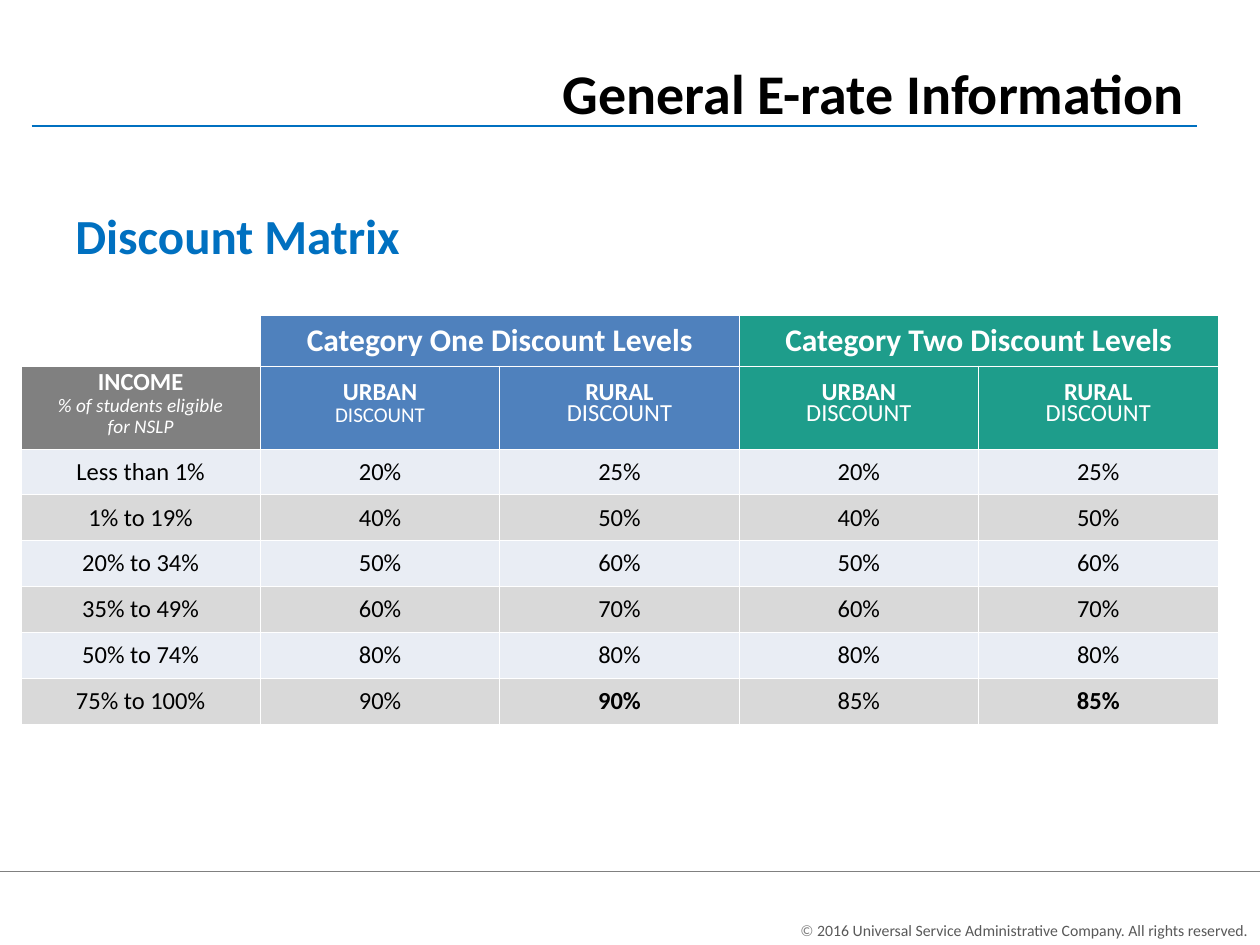
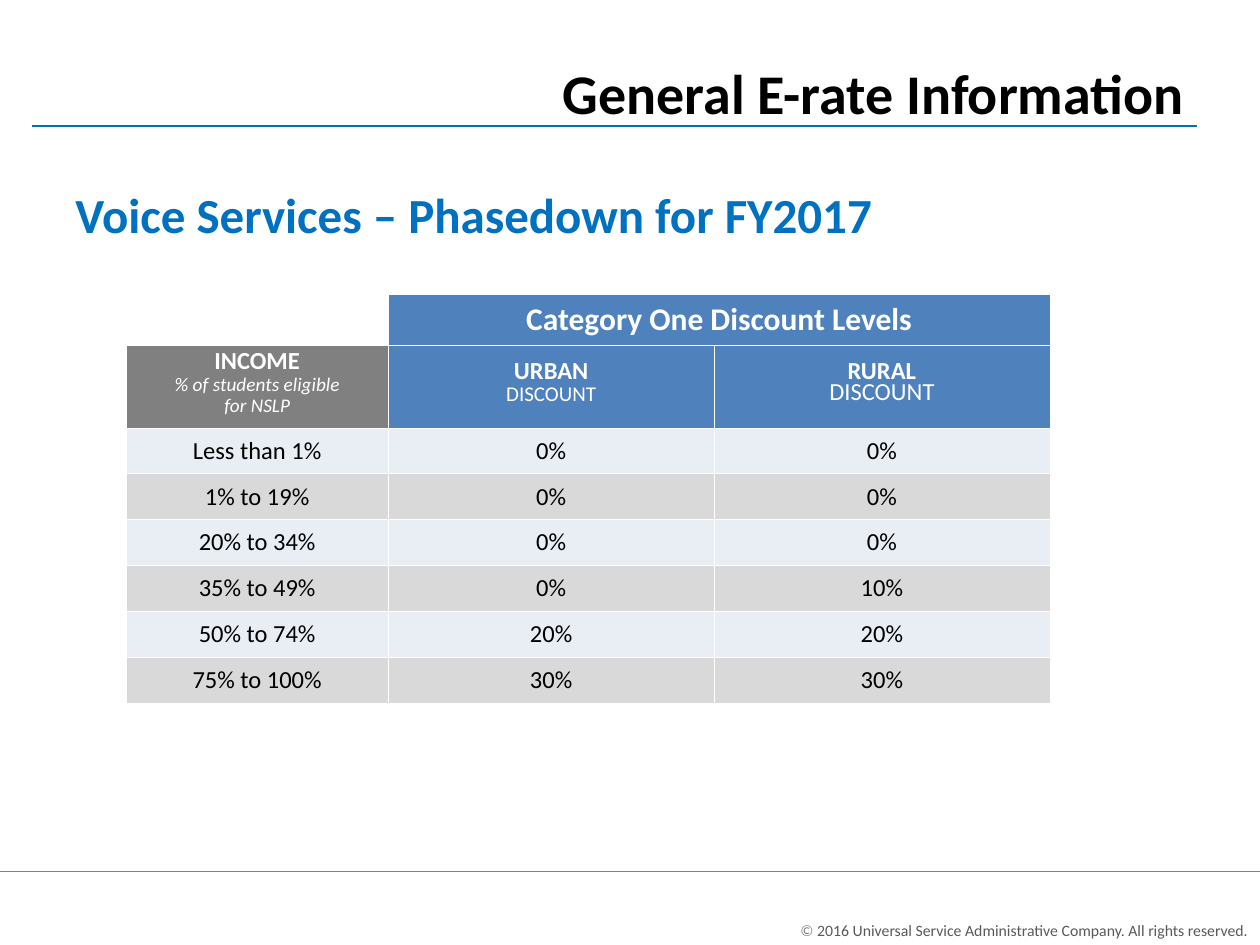
from copy import deepcopy

from lxml.etree import SubElement
from pptx import Presentation
from pptx.dml.color import RGBColor
from pptx.enum.shapes import MSO_CONNECTOR
from pptx.enum.text import MSO_ANCHOR, MSO_AUTO_SIZE, PP_ALIGN
from pptx.oxml.ns import qn
from pptx.util import Inches, Pt

# Shared style: the slide is a grid of 120 columns by 90 rows
COLS, ROWS = 120, 90
FONT = "Calibri"
BLACK, WHITE, GRAY, DARK = "000000", "FFFFFF", "808080", "595959"
ACCENT, BLUE, TEAL = "0070C0", "4F81BD", "1E9D8B"
BANDS = ("E9EDF4", "D9D9D9")
HEAD_H, SUBHEAD_H, DATA_H = 4.86, 7.9, 4.37

INCOMES = ["Less than 1%", "1% to 19%", "20% to 34%",
           "35% to 49%", "50% to 74%", "75% to 100%"]


def rgb(color):
    return RGBColor.from_string(color)


class Deck:
    def __init__(self):
        self.prs = Presentation()
        self.prs.slide_width, self.prs.slide_height = Inches(10), Inches(7.5)
        self.s = None

    def x(self, cols):
        return round(self.prs.slide_width * cols / COLS)

    def y(self, rows):
        return round(self.prs.slide_height * rows / ROWS)

    def box(self, left, top, width, height):
        return self.x(left), self.y(top), self.x(width), self.y(height)

    def style(self, font, size, color, bold=False, italic=False):
        font.name, font.size = FONT, Pt(size)
        font.bold, font.italic = bold, italic
        font.color.rgb = rgb(color)

    def add_slide(self, title):
        self.s = self.prs.slides.add_slide(self.prs.slide_layouts[5])
        self.line(3, 12, 114, ACCENT, 1.25)
        self.line(0, 83, 120, GRAY, 0.75)
        self.title(title)
        self.footer()

    def title(self, text):
        sp = self.s.shapes.title
        sp.left, sp.top, sp.width, sp.height = self.box(33, 5, 81, 7)
        tf = sp.text_frame
        tf.text = text
        tf.auto_size = MSO_AUTO_SIZE.NONE
        tf.vertical_anchor = MSO_ANCHOR.TOP
        p = tf.paragraphs[0]
        p.alignment = PP_ALIGN.RIGHT
        self.style(p.font, 32, BLACK, bold=True)

    def line(self, x1, y, x2, color, weight):
        c = self.s.shapes.add_connector(MSO_CONNECTOR.STRAIGHT, self.x(x1),
                                        self.y(y), self.x(x2), self.y(y))
        c.line.color.rgb = rgb(color)
        c.line.width = Pt(weight)
        SubElement(c._element.spPr, qn("a:effectLst"))

    def text_box(self, *place):
        tf = self.s.shapes.add_textbox(*self.box(*place)).text_frame
        tf.word_wrap = True
        return tf.paragraphs[0]

    def heading(self, text, top):
        p = self.text_box(6, top, 108, 8)
        p.text = text
        self.style(p.font, 28, ACCENT, bold=True)

    def footer(self):
        p = self.text_box(12.5, 87.1, 107.5, 3)
        p.alignment = PP_ALIGN.RIGHT
        notice = "2016 Universal Service Administrative Company. All rights reserved."
        for text, color in (("© ", GRAY), (notice, DARK)):
            r = p.add_run()
            r.text = text
            self.style(r.font, 9, color)

    def borders(self, cell):
        tcPr = cell._tc.get_or_add_tcPr()
        for i, side in enumerate(("a:lnL", "a:lnR", "a:lnT", "a:lnB")):
            ln = tcPr.makeelement(qn(side), {"w": str(Pt(0.5))})
            fill = SubElement(ln, qn("a:solidFill"))
            SubElement(fill, qn("a:srgbClr"), val=WHITE)
            tcPr.insert(i, ln)

    def cell(self, cell, text, fill, size=14, color=BLACK, bold=False):
        cell.fill.solid()
        cell.fill.fore_color.rgb = rgb(fill)
        p = cell.text_frame.paragraphs[0]
        p.text = text
        p.alignment = PP_ALIGN.CENTER
        self.style(p.font, size, color, bold)

    def label_cell(self, cell, fill, lines):
        """Stack lines of (text, size, bold, italic) in one tight paragraph."""
        cell.fill.solid()
        cell.fill.fore_color.rgb = rgb(fill)
        p = cell.text_frame.paragraphs[0]
        p.alignment = PP_ALIGN.CENTER
        p.line_spacing = Pt(12)
        for i, (text, size, bold, italic) in enumerate(lines):
            if i:
                # The break keeps the format of the line it ends
                p.add_line_break()
                p._p[-1].append(deepcopy(r._r.rPr))
            r = p.add_run()
            r.text = text
            self.style(r.font, size, WHITE, bold, italic)

    def discount_table(self, left, top, widths, categories, values, bold=()):
        heights = [HEAD_H, SUBHEAD_H] + [DATA_H] * len(values)
        frame = self.s.shapes.add_table(
            len(heights), len(widths),
            *self.box(left, top, sum(widths), sum(heights)))
        tbl = frame.table
        tbl.first_row = tbl.horz_banding = False
        for col, width in zip(tbl.columns, widths):
            col.width = self.x(width)
        for row, height in zip(tbl.rows, heights):
            row.height = self.y(height)
        for cell in tbl.iter_cells():
            cell.margin_left = cell.margin_right = 0
            cell.margin_top = cell.margin_bottom = 0
            cell.vertical_anchor = MSO_ANCHOR.MIDDLE
            cell.fill.background()
            self.borders(cell)

        # Header rows
        self.label_cell(tbl.cell(1, 0), GRAY, [
            ("INCOME", 14, True, False),
            ("% of students eligible", 11, False, True),
            ("for NSLP", 11, False, True)])
        for i, (name, fill) in enumerate(categories):
            first = 1 + 2 * i
            tbl.cell(0, first).merge(tbl.cell(0, first + 1))
            self.cell(tbl.cell(0, first), f"Category {name} Discount Levels",
                      fill, 18, WHITE, True)
            for c, area in enumerate(("URBAN", "RURAL"), first):
                self.label_cell(tbl.cell(1, c), fill, [
                    (area, 14, True, False),
                    ("DISCOUNT", 12 if c == 1 else 14, False, False)])

        # Income bands
        for i, (income, row) in enumerate(zip(INCOMES, values)):
            texts = [income] + [f"{value}%" for value in row]
            for c, text in enumerate(texts):
                self.cell(tbl.cell(i + 2, c), text, BANDS[i % 2],
                          bold=(i, c) in bold)


def main():
    deck = Deck()

    # Slide 1: discount matrix
    deck.add_slide("General E-rate Information")
    pairs = [(20, 25), (40, 50), (50, 60), (60, 70), (80, 80)]
    deck.discount_table(2, 30, [22.8] * 5, [("One", BLUE), ("Two", TEAL)],
                        [pair * 2 for pair in pairs] + [(90, 90, 85, 85)],
                        bold={(5, 2), (5, 4)})
    deck.heading("Discount Matrix", 19)

    # Slide 2: voice phasedown
    deck.add_slide("General E-rate Information")
    deck.discount_table(12, 28, [25, 31, 32], [("One", BLUE)],
                        [(0, 0), (0, 0), (0, 0), (0, 10), (20, 20), (30, 30)])
    deck.heading("Voice Services – Phasedown for FY2017", 17)

    deck.prs.save("out.pptx")


if __name__ == "__main__":
    main()
